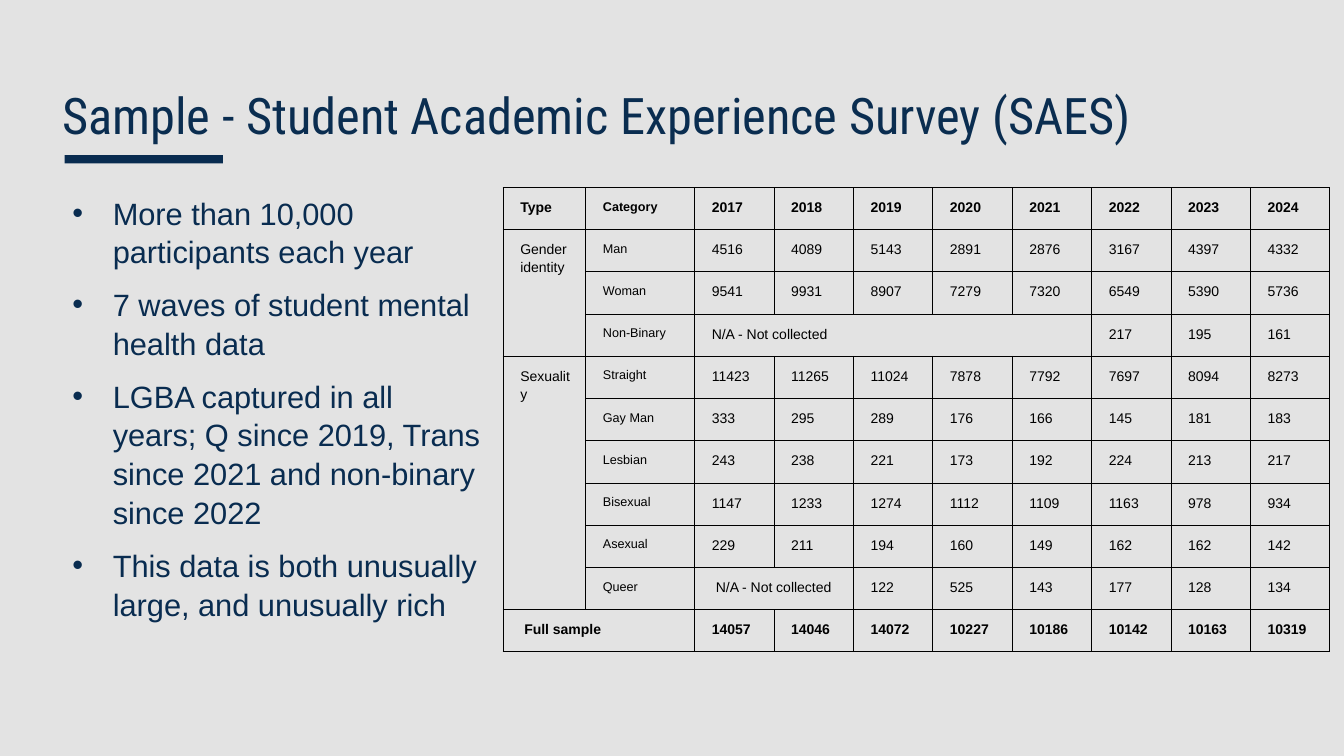
from pptx import Presentation
from pptx.dml.color import RGBColor
from pptx.enum.shapes import MSO_SHAPE as Shape
from pptx.enum.text import MSO_ANCHOR as Anchor
from pptx.oxml import parse_xml
from pptx.oxml.ns import nsdecls
from pptx.util import Inches, Pt

NAVY, TITLE_NAVY, BLACK, BACKGROUND = "092C50", "0A2D50", "000000", "E3E3E3"

TITLE = "Sample - Student Academic Experience Survey (SAES)"
POINTS = [
    "More than 10,000 participants each year",
    "7 waves of student mental health data",
    "LGBA captured in all years; Q since 2019, Trans since 2021 and non-binary since 2022",
    "This data is both unusually large, and unusually rich",
]
NOT_COLLECTED = "N/A - Not collected"
SAMPLE = [
    ["Type", "Category", 2017, 2018, 2019, 2020, 2021, 2022, 2023, 2024],
    ["Gender identity", "Man", 4516, 4089, 5143, 2891, 2876, 3167, 4397, 4332],
    ["", "Woman", 9541, 9931, 8907, 7279, 7320, 6549, 5390, 5736],
    ["", "Non-Binary", NOT_COLLECTED, "", "", "", "", 217, 195, 161],
    ["Sexuality", "Straight", 11423, 11265, 11024, 7878, 7792, 7697, 8094, 8273],
    ["", "Gay Man", 333, 295, 289, 176, 166, 145, 181, 183],
    ["", "Lesbian", 243, 238, 221, 173, 192, 224, 213, 217],
    ["", "Bisexual", 1147, 1233, 1274, 1112, 1109, 1163, 978, 934],
    ["", "Asexual", 229, 211, 194, 160, 149, 162, 162, 142],
    ["", "Queer", NOT_COLLECTED, "", 122, 525, 143, 177, 128, 134],
    ["Full sample", "", 14057, 14046, 14072, 10227, 10186, 10142, 10163, 10319],
]
# First and last cell of each merged block, as (row, column)
MERGES = [((1, 0), (3, 0)), ((4, 0), (9, 0)), ((3, 2), (3, 6)),
          ((9, 2), (9, 3)), ((10, 0), (10, 1))]
# Cells whose text is set slightly further in
DEEPER_INDENT = [(9, 2), (10, 0)]


def color(hex_string):
    return RGBColor.from_string(hex_string)


def add_run(paragraph, text, size, hex_color, font="Arial", bold=False):
    run = paragraph.add_run()
    run.text = text
    run.font.name, run.font.size, run.font.bold = font, Pt(size), bold
    run.font.color.rgb = color(hex_color)


def add_text_frame(slide, left, top, width, height, anchor):
    box = slide.shapes.add_textbox(Inches(left), Inches(top), Inches(width), Inches(height))
    frame = box.text_frame
    frame.word_wrap = True
    frame.vertical_anchor = anchor
    return frame


def add_title(slide, left, top, width, height):
    # Accent bar under the title
    bar = slide.shapes.add_shape(Shape.RECTANGLE, Inches(left + 0.12), Inches(top + height),
                                 Inches(1.57), Inches(0.08))
    bar.shadow.inherit = False
    bar.fill.solid()
    bar.fill.fore_color.rgb = color(NAVY)
    bar.line.fill.background()
    # Title text
    heading = add_text_frame(slide, left, top, width, height, Anchor.MIDDLE).paragraphs[0]
    heading.line_spacing = 0.9
    add_run(heading, TITLE, 36, TITLE_NAVY, "Roboto Condensed")


def add_points(slide, left, top, width, height):
    frame = add_text_frame(slide, left, top, width, height, Anchor.TOP)
    for index, point in enumerate(POINTS):
        paragraph = frame.add_paragraph() if index else frame.paragraphs[0]
        properties = paragraph._p.get_or_add_pPr()
        properties.set("marL", str(Inches(0.5)))
        properties.set("indent", str(Inches(-0.4)))
        for bullet_part in (f'<a:buClr {nsdecls("a")}><a:srgbClr val="{NAVY}"/></a:buClr>',
                            f'<a:buFont {nsdecls("a")} typeface="Arial"/>',
                            f'<a:buChar {nsdecls("a")} char="•"/>'):
            properties.append(parse_xml(bullet_part))
        paragraph.line_spacing = 1.05
        paragraph.space_before = Pt(10 if index else 0)
        add_run(paragraph, point, 22, NAVY)


def style_cell(cell):
    cell.margin_left = cell.margin_right = cell.margin_top = cell.margin_bottom = Inches(0.1)
    properties = cell._tc.get_or_add_tcPr()
    for side in "LRTB":
        properties.append(parse_xml(
            f'<a:ln{side} {nsdecls("a")} w="{Pt(0.75)}"><a:solidFill>'
            f'<a:srgbClr val="{BLACK}"/></a:solidFill></a:ln{side}>'))
    cell.fill.background()


def add_sample_table(slide, left, top, width, height):
    row_count, column_count = len(SAMPLE), len(SAMPLE[0])
    table = slide.shapes.add_table(row_count, column_count, Inches(left), Inches(top),
                                   Inches(width), Inches(height)).table
    table.first_row = table.horz_banding = False

    # Two label columns, then equal year columns
    labels = [0.82, 1.08]
    year_width = (width - sum(labels)) / (column_count - len(labels))
    widths = labels + [year_width] * (column_count - len(labels))
    for column, column_width in zip(table.columns, widths):
        column.width = Inches(column_width)
    for row in table.rows:
        row.height = Inches(height / row_count)

    for first, last in MERGES:
        table.cell(*first).merge(table.cell(*last))

    for row_index, values in enumerate(SAMPLE):
        for column_index, value in enumerate(values):
            cell = table.cell(row_index, column_index)
            style_cell(cell)
            if value == "":
                continue
            paragraph = cell.text_frame.paragraphs[0]
            indent = 0.11 if (row_index, column_index) in DEEPER_INDENT else 0.07
            paragraph._p.get_or_add_pPr().set("marL", str(Inches(indent)))
            paragraph.line_spacing = 1.15
            add_run(paragraph, str(value), 9 if column_index == 1 else 10, BLACK,
                    bold=row_index in (0, row_count - 1))


def main():
    deck = Presentation()
    deck.slide_width, deck.slide_height = Inches(13.33), Inches(7.5)
    slide = deck.slides.add_slide(deck.slide_layouts[6])
    slide.background.fill.solid()
    slide.background.fill.fore_color.rgb = color(BACKGROUND)
    add_title(slide, 0.52, 0.81, 12.26, 0.73)
    add_points(slide, 0.52, 1.86, 4.38, 4.68)
    add_sample_table(slide, 4.99, 1.86, 8.2, 4.61)
    deck.save("out.pptx")


if __name__ == "__main__":
    main()
